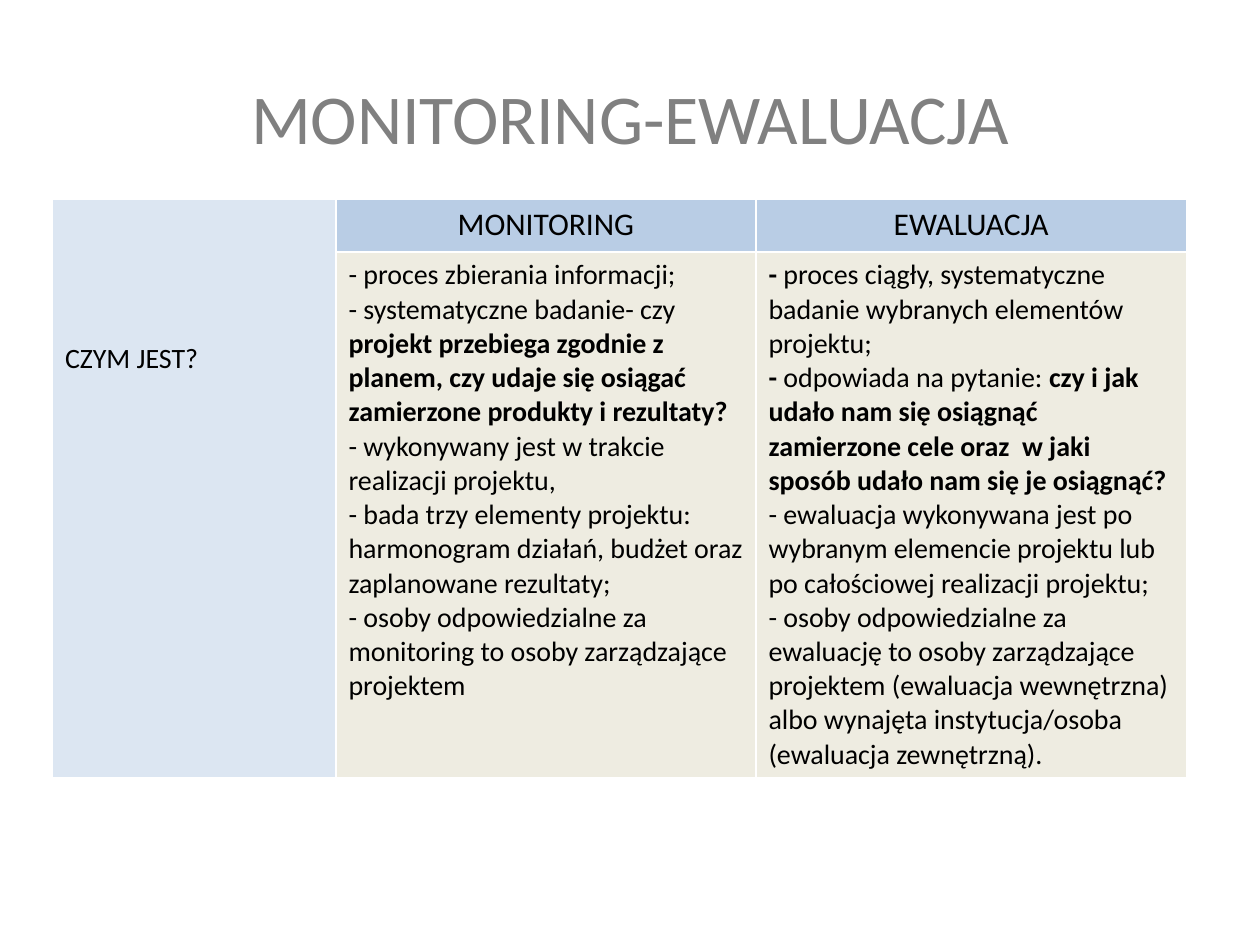
"""Build a slide that compares monitoring with evaluation in a table."""
from pptx import Presentation as Deck
from pptx.dml.color import RGBColor as Rgb
from pptx.enum.text import MSO_ANCHOR as Anchor, PP_ALIGN as Align
from pptx.util import Inches, Pt

GRAY = Rgb(0x80, 0x80, 0x80)
BLACK = Rgb(0, 0, 0)
PALE = Rgb(0xDC, 0xE6, 0xF2)
BLUE = Rgb(0xB9, 0xCD, 0xE5)
SAND = Rgb(0xEE, 0xEC, 0xE1)
FONT = "Calibri"
COLS = (27, 40, 41)
ROWS = (5, 50)

HEADS = ("MONITORING", "EWALUACJA")
BODIES = (
    (
        "- proces zbierania informacji;",
        "- systematyczne badanie- czy *projekt przebiega zgodnie z planem, "
        "czy udaje się osiągać zamierzone produkty i rezultaty?",
        "- wykonywany jest w trakcie realizacji projektu,",
        "- bada trzy elementy projektu:  harmonogram działań, budżet oraz "
        "zaplanowane rezultaty;",
        "- osoby odpowiedzialne za monitoring to osoby zarządzające projektem",
    ),
    (
        "*- *proces ciągły, systematyczne badanie wybranych elementów projektu;",
        "*- *odpowiada na pytanie:* czy i jak udało nam się osiągnąć "
        "zamierzone cele oraz  w jaki sposób udało nam się je osiągnąć?",
        "- ewaluacja wykonywana jest po wybranym elemencie projektu lub "
        "po całościowej realizacji projektu;",
        "- osoby odpowiedzialne za ewaluację to osoby zarządzające projektem "
        "(ewaluacja wewnętrzna) albo wynajęta instytucja/osoba "
        "(ewaluacja zewnętrzną).",
    ),
)


def grid(count):
    """Return the length of count units, twelve to the inch."""
    return Inches(count / 12)


def write(frame, *lines, size=16, color=BLACK, align=Align.LEFT):
    """Write one paragraph per line, with bold parts between asterisks."""
    for row, line in enumerate(lines):
        para = frame.add_paragraph() if row else frame.paragraphs[0]
        para.alignment = align
        for part, text in enumerate(line.split("*")):
            if text:
                run = para.add_run()
                run.text = text
                font = run.font
                font.name, font.size = FONT, Pt(size)
                font.bold = part % 2 == 1
                font.color.rgb = color


def title(slide, text):
    """Add the centred slide title."""
    box = slide.shapes.add_textbox(grid(6), grid(3.6), grid(108), grid(15))
    frame = box.text_frame
    frame.word_wrap = True
    frame.vertical_anchor = Anchor.MIDDLE
    write(frame, text, size=40, color=GRAY, align=Align.CENTER)


def fill(cell, color, *lines, **style):
    """Give a cell its colour and its text."""
    cell.fill.solid()
    cell.fill.fore_color.rgb = color
    write(cell.text_frame, *lines, **style)


def table(slide):
    """Add the comparison table."""
    frame = slide.shapes.add_table(len(ROWS), len(COLS), grid(5), grid(19),
                                   grid(sum(COLS)), grid(sum(ROWS)))
    tab = frame.table
    for col, wide in zip(tab.columns, COLS):
        col.width = grid(wide)
    for row, high in zip(tab.rows, ROWS):
        row.height = grid(high)
    side = tab.cell(0, 0)
    side.merge(tab.cell(1, 0))
    side.margin_top = grid(13.6)
    fill(side, PALE, "CZYM JEST?")
    for col, (head, body) in enumerate(zip(HEADS, BODIES), 1):
        fill(tab.cell(0, col), BLUE, head, size=18, align=Align.CENTER)
        fill(tab.cell(1, col), SAND, *body)


def main():
    """Build and save the slide."""
    deck = Deck()
    deck.slide_width, deck.slide_height = grid(120), grid(90)
    slide = deck.slides.add_slide(deck.slide_layouts[6])
    table(slide)
    title(slide, "MONITORING-EWALUACJA")
    deck.save("out.pptx")


if __name__ == "__main__":
    main()
